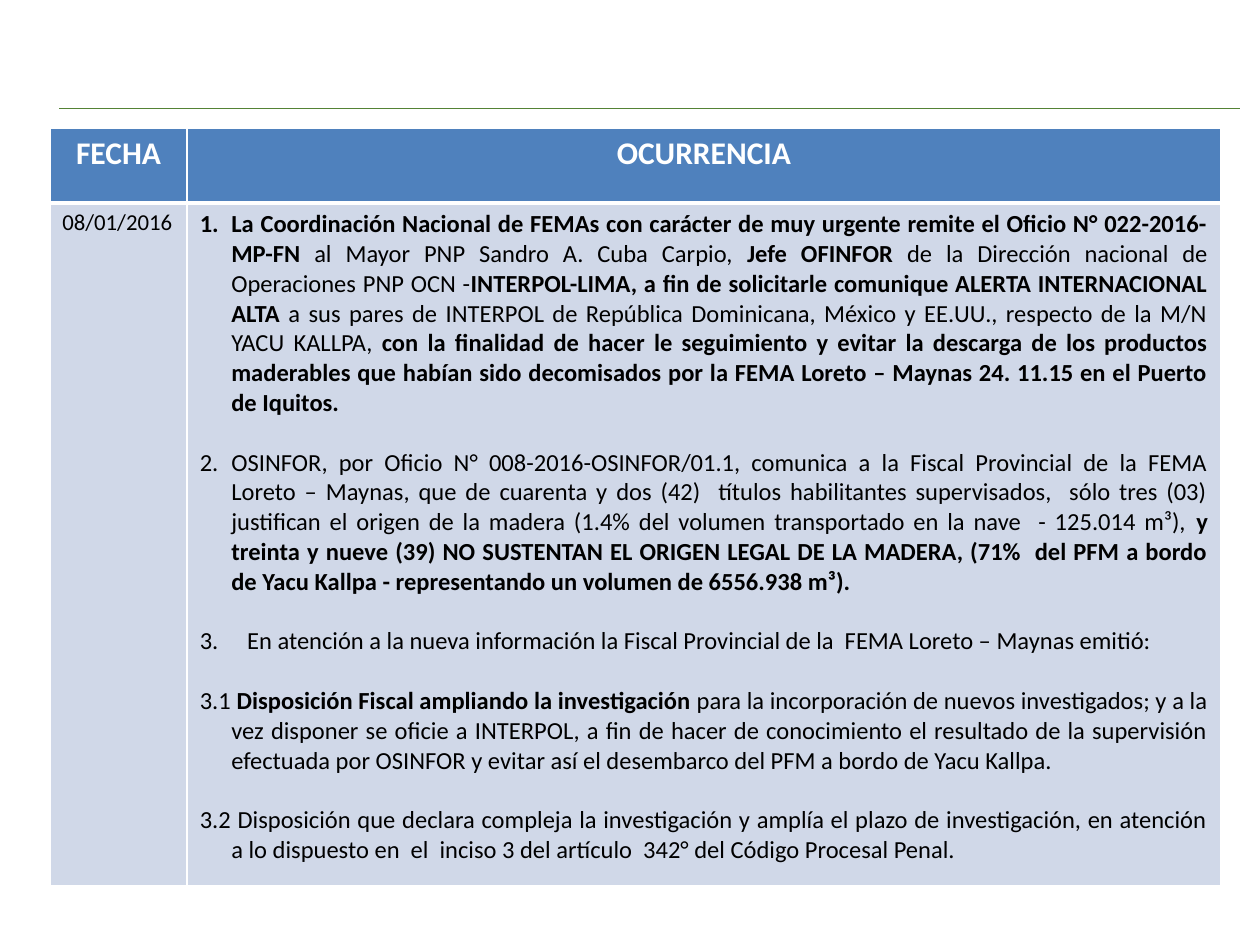
from lxml.etree import SubElement
from pptx import Presentation
from pptx.dml.color import RGBColor
from pptx.enum.shapes import MSO_CONNECTOR
from pptx.enum.text import PP_ALIGN
from pptx.oxml.ns import qn
from pptx.util import Pt

HEADERS = ["FECHA", "OCURRENCIA"]
DATE = "08/01/2016"
# Each occurrence: automatic number (or None), indent, runs of (text, bold)
OCCURRENCES = [
    (1, 18, [
        ("La Coordinación Nacional de FEMAs con carácter de muy urgente remite el Oficio "
         "N° 022-2016-MP-FN ", True),
        ("al Mayor PNP Sandro A. Cuba Carpio, ", False),
        ("Jefe OFINFOR ", True),
        ("de la Dirección nacional de Operaciones PNP OCN -", False),
        ("INTERPOL-LIMA, a fin de solicitarle comunique ALERTA INTERNACIONAL ALTA ", True),
        ("a sus pares de INTERPOL de República Dominicana, México y EE.UU., respecto de la "
         "M/N YACU KALLPA, ", False),
        ("con la finalidad de hacer le seguimiento y evitar la descarga de los productos "
         "maderables que habían sido decomisados por la FEMA Loreto – Maynas 24. 11.15 en "
         "el Puerto de Iquitos.", True),
    ]),
    (2, 18, [
        ("OSINFOR, por Oficio N° 008-2016-OSINFOR/01.1, comunica a la Fiscal Provincial de "
         "la FEMA Loreto – Maynas, que de cuarenta y dos (42)  títulos habilitantes "
         "supervisados,  sólo tres (03) justifican el origen de la madera (1.4% del volumen "
         "transportado en la nave  - 125.014 m³), ", False),
        ("y treinta y nueve (39) NO SUSTENTAN EL ORIGEN LEGAL DE LA MADERA, (71%  del PFM a "
         "bordo de Yacu Kallpa - representando un volumen de 6556.938 m³).", True),
    ]),
    (3, 27, [
        ("En atención a la nueva información la Fiscal Provincial de la  FEMA Loreto – "
         "Maynas emitió:", False),
    ]),
    (None, 18, [
        ("3.1 ", False),
        ("Disposición Fiscal ampliando la investigación ", True),
        ("para la incorporación de nuevos investigados; y a la vez disponer se oficie a "
         "INTERPOL, a fin de hacer de conocimiento el resultado de la supervisión efectuada "
         "por OSINFOR y evitar así el desembarco del PFM a bordo de Yacu Kallpa.", False),
    ]),
    (None, 18, [
        ("3.2 Disposición que declara compleja la investigación y amplía el plazo de "
         "investigación, en atención a lo dispuesto en  el  inciso 3 del artículo  342° del "
         "Código Procesal Penal.", False),
    ]),
]

COLUMN_WIDTHS = [78.5, 590.5]
ROW_HEIGHTS = [42.5, 390]
ROW_FILLS = ["4F81BD", "D0D8E8"]
HEADER_RULE = 3
PARAGRAPH_GAP = 17


def color(hex_value):
    return RGBColor.from_string(hex_value)


def write(paragraph, runs, size, font_color="000000", align=PP_ALIGN.JUSTIFY,
          indent=0, number=None, space_before=0):
    properties = paragraph._p.get_or_add_pPr()
    if indent:
        properties.set("marL", str(Pt(indent)))
        properties.set("indent", str(-Pt(indent)))
    if number:
        SubElement(properties, qn("a:buFont"), typeface="+mj-lt")
        SubElement(properties, qn("a:buAutoNum"), type="arabicPeriod", startAt=str(number))
    paragraph.alignment = align
    paragraph.space_before = Pt(space_before)
    for text, bold in runs:
        run = paragraph.add_run()
        run.text = text
        run.font.name = "Calibri"
        run.font.size = Pt(size)
        run.font.bold = bold
        run.font.color.rgb = color(font_color)


def style_cell(cell, fill, top, bottom):
    """Give the cell white borders, then its fill, in the order the schema needs."""
    properties = cell._tc.get_or_add_tcPr()
    for side, width in {"lnL": 1, "lnR": 1, "lnT": top, "lnB": bottom}.items():
        border = SubElement(properties, qn(f"a:{side}"), w=str(Pt(width)))
        solid = SubElement(border, qn("a:solidFill"))
        SubElement(solid, qn("a:srgbClr"), val="FFFFFF")
    cell.fill.solid()
    cell.fill.fore_color.rgb = color(fill)


def add_rule(slide):
    rule = slide.shapes.add_connector(MSO_CONNECTOR.STRAIGHT, Pt(34), Pt(62), Pt(708.5), Pt(62))
    rule.line.color.rgb = color("548235")
    rule.line.width = Pt(0.5)
    SubElement(rule._element.spPr, qn("a:effectLst"))


def add_occurrence_table(slide):
    table = slide.shapes.add_table(
        len(ROW_HEIGHTS), len(COLUMN_WIDTHS), Pt(28.5), Pt(73.5),
        Pt(sum(COLUMN_WIDTHS)), Pt(sum(ROW_HEIGHTS))).table
    for column, width in zip(table.columns, COLUMN_WIDTHS):
        column.width = Pt(width)
    for row_index, (row, height) in enumerate(zip(table.rows, ROW_HEIGHTS)):
        row.height = Pt(height)
        top, bottom = (1, HEADER_RULE) if row_index == 0 else (HEADER_RULE, 1)
        for cell in row.cells:
            style_cell(cell, ROW_FILLS[row_index], top, bottom)

    for column_index, header in enumerate(HEADERS):
        write(table.cell(0, column_index).text_frame.paragraphs[0], [(header, True)], 18,
              font_color="FFFFFF", align=PP_ALIGN.CENTER)
    write(table.cell(1, 0).text_frame.paragraphs[0], [(DATE, False)], 13)
    frame = table.cell(1, 1).text_frame
    for index, (number, indent, runs) in enumerate(OCCURRENCES):
        paragraph = frame.add_paragraph() if index else frame.paragraphs[0]
        write(paragraph, runs, 14, indent=indent, number=number,
              space_before=PARAGRAPH_GAP if index else 0)


def main():
    presentation = Presentation()
    presentation.slide_width, presentation.slide_height = Pt(720), Pt(540)
    slide = presentation.slides.add_slide(presentation.slide_layouts[6])
    add_rule(slide)
    add_occurrence_table(slide)
    presentation.save("out.pptx")


if __name__ == "__main__":
    main()
